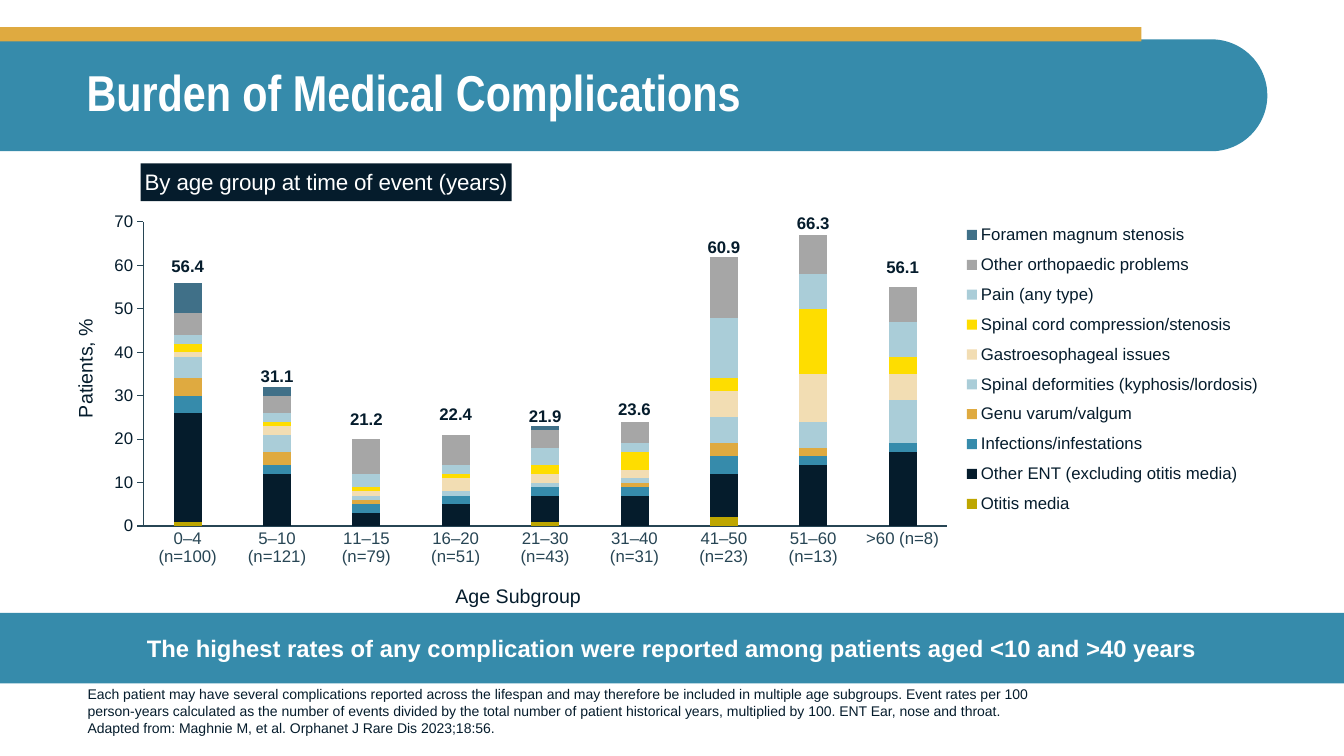
from dataclasses import dataclass

from lxml import etree
from pptx import Presentation
from pptx import util as u
from pptx.chart.data import CategoryChartData
from pptx.dml.color import RGBColor
from pptx.enum import chart as ch, shapes, text
from pptx.oxml.ns import qn


@dataclass(frozen=True)
class Theme:
    """Colours, fonts and type sizes of the slide."""
    ink: str = "051C2C"
    axis: str = "274554"
    teal: str = "368BAB"
    gold: str = "DFAA40"
    pale: str = "AACDD8"
    white: str = "FFFFFF"
    font: str = "Arial"
    head_font: str = "Arial Narrow"
    head: int = 36
    message: int = 17
    subtitle: int = 16
    axis_title: int = 14
    label: int = 12
    note: int = 10


T = Theme()
LEFT, CENTER = text.PP_ALIGN.LEFT, text.PP_ALIGN.CENTER
TOP, MIDDLE, BOTTOM = (text.MSO_ANCHOR.TOP, text.MSO_ANCHOR.MIDDLE,
                       text.MSO_ANCHOR.BOTTOM)

CATEGORIES = ["0–4 (n=100)", "5–10 (n=121)", "11–15 (n=79)", "16–20 (n=51)",
              "21–30 (n=43)", "31–40 (n=31)", "41–50 (n=23)", "51–60 (n=13)",
              ">60 (n=8)"]
TOTALS = [56.4, 31.1, 21.2, 22.4, 21.9, 23.6, 60.9, 66.3, 56.1]
SERIES = [
    ("Otitis media", "BEA600", [1, None, None, None, 1, None, 2, None, None]),
    ("Other ENT (excluding otitis media)", T.ink, [25, 12, 3, 5, 6, 7, 10, 14, 17]),
    ("Infections/infestations", T.teal, [4, 2, 2, 2, 2, 2, 4, 2, 2]),
    ("Genu varum/valgum", T.gold, [4, 3, 1, 0, None, 1, 3, 2, None]),
    ("Spinal deformities (kyphosis/lordosis)", T.pale, [5, 4, 1, 1, 1, 1, 6, 6, 10]),
    ("Gastroesophageal issues", "F2DDB3", [1, 2, 1, 3, 2, 2, 6, 11, 6]),
    ("Spinal cord compression/stenosis", "FEDD00", [2, 1, 1, 1, 2, 4, 3, 15, 4]),
    ("Pain (any type)", T.pale, [2, 2, 3, 2, 4, 2, 14, 8, 8]),
    ("Other orthopaedic problems", "A6A6A6", [5, 4, 8, 7, 4, 5, 14, 9, 8]),
    ("Foramen magnum stenosis", "407088",
     [7, 2, None, None, 1, None, None, None, None]),
]
AXIS_MAX = 70
CHART_BOX = (0.77, 1.55, 11.8, 4.41)
PLOT = (0.055, 0.148, 0.676, 0.684)


class SlideBuilder:
    """Adds themed elements to the current slide."""

    def __init__(self, slide, theme):
        self.slide, self.theme = slide, theme

    def style(self, font, size, color, bold=False, name=None):
        """Set size, colour, weight and typeface of a font."""
        font.size, font.bold = u.Pt(size), bold
        font.name = name or self.theme.font
        font.color.rgb = RGBColor.from_string(color)

    def set_text(self, sp, lines, size, color, bold=False, name=None,
                 align=LEFT, anchor=TOP, wrap=True):
        """Fill a shape with one paragraph per line."""
        tf = sp.text_frame
        tf.word_wrap, tf.vertical_anchor = wrap, anchor
        tf.text = "\n".join(lines)
        for p in tf.paragraphs:
            p.alignment = align
            self.style(p.font, size, color, bold, name)
        return tf

    def label(self, box, lines, size, color, rotation=0, **kw):
        """Add a text box."""
        sp = self.slide.shapes.add_textbox(*map(u.Inches, box))
        sp.rotation = rotation
        return self.set_text(sp, lines, size, color, **kw)

    def block(self, box, color, kind=shapes.MSO_SHAPE.RECTANGLE):
        """Add a filled shape without outline."""
        sp = self.slide.shapes.add_shape(kind, *map(u.Inches, box))
        sp.shadow.inherit = False
        sp.fill.solid()
        sp.fill.fore_color.rgb = RGBColor.from_string(color)
        sp.line.fill.background()
        return sp

    def place(self, parent, box, inner=False):
        """Give a chart part a manual layout in fractions of the chart."""
        for old in parent.findall(qn("c:layout")):
            parent.remove(old)
        layout = etree.Element(qn("c:layout"))
        manual = etree.SubElement(layout, qn("c:manualLayout"))
        pairs = [("layoutTarget", "inner")] if inner else []
        pairs += [("xMode", "edge"), ("yMode", "edge"), *zip("xywh", box)]
        for tag, val in pairs:
            etree.SubElement(manual, qn("c:" + tag)).set("val", str(val))
        overlay = parent.find(qn("c:overlay"))
        if overlay is None:
            parent.insert(0, layout)
        else:
            overlay.addprevious(layout)

    def axis(self, axis, color, tick):
        """Style a chart axis."""
        axis.has_major_gridlines = False
        axis.major_tick_mark, axis.minor_tick_mark = tick, ch.XL_TICK_MARK.NONE
        axis.format.line.color.rgb = RGBColor.from_string(self.theme.axis)
        axis.format.line.width = u.Pt(0.75)
        self.style(axis.tick_labels.font, self.theme.label, color)

    def stacked_chart(self, box, title):
        """Add the stacked column chart with title and legend."""
        t = self.theme
        data = CategoryChartData()
        data.categories = CATEGORIES
        for name, _, values in SERIES:
            data.add_series(name, values)
        chart = self.slide.shapes.add_chart(
            ch.XL_CHART_TYPE.COLUMN_STACKED, *map(u.Inches, box), data).chart
        self.style(chart.font, t.note, t.ink)

        plot = chart.plots[0]
        plot.gap_width, plot.overlap, plot.vary_by_categories = 219, 100, False
        for ser, (_, color, _) in zip(plot.series, SERIES):
            ser.format.fill.solid()
            ser.format.fill.fore_color.rgb = RGBColor.from_string(color)

        self.axis(chart.category_axis, t.axis, ch.XL_TICK_MARK.NONE)
        self.axis(chart.value_axis, t.ink, ch.XL_TICK_MARK.OUTSIDE)
        chart.value_axis.minimum_scale = 0
        chart.value_axis.maximum_scale = AXIS_MAX
        chart.value_axis.major_unit = 10

        chart.has_title = True
        heading = chart.chart_title
        heading.text_frame.text = title
        self.style(heading.text_frame.paragraphs[0].font, t.subtitle, t.white)
        heading.format.fill.solid()
        heading.format.fill.fore_color.rgb = RGBColor.from_string(t.ink)

        chart.has_legend = True
        chart.legend.position = ch.XL_LEGEND_POSITION.RIGHT
        chart.legend.include_in_layout = False
        self.style(chart.legend.font, t.label, t.ink)

        parts = [("title", (0.053, 0.016)), ("legend", (0.74, 0.13, 0.26, 0.7)),
                 ("plotArea", PLOT)]
        for tag, spot in parts:
            part = chart.element.xpath("c:chart/c:" + tag)[0]
            self.place(part, spot, tag == "plotArea")

    def totals(self, box, size=(0.53, 0.3)):
        """Put each total just above its column."""
        x, y, w, h = box
        px, py, pw, ph = PLOT
        step = w * pw / len(TOTALS)
        base = y + h * (py + ph)
        for i, total in enumerate(TOTALS):
            left = x + w * px + step * (i + 0.5) - size[0] / 2
            top = base - h * ph * total / AXIS_MAX - size[1]
            self.label((left, top, *size), [str(total)], self.theme.label,
                       self.theme.ink, bold=True, align=CENTER, wrap=False)


def main():
    """Build and save the slide."""
    prs = Presentation()
    prs.slide_width, prs.slide_height = u.Inches(13.33), u.Inches(7.5)
    s = SlideBuilder(prs.slides.add_slide(prs.slide_layouts[6]), T)

    banner = s.block((5.73, -5.34, 1.11, 12.57), T.teal,
                     shapes.MSO_SHAPE.ROUND_2_SAME_RECTANGLE)
    banner.rotation = 270
    banner.adjustments[0], banner.adjustments[1] = 0, 0.5
    s.block((0, 0.27, 11.32, 0.14), T.gold)
    tf = s.label((0.76, 0.39, 11.81, 1.1), ["Burden of Medical Complications"],
                 T.head, T.white, bold=True, name=T.head_font, anchor=MIDDLE)
    tf.paragraphs[0].line_spacing = 0.9

    s.label((0.77, 6.79, 9.88, 0.56), [
        "Each patient may have several complications reported across the lifespan "
        "and may therefore be included in multiple age subgroups. Event rates per "
        "100 person-years calculated as the number of events divided by the total "
        "number of patient historical years, multiplied by 100. ENT Ear, nose and "
        "throat.",
        "Adapted from: Maghnie M, et al. Orphanet J Rare Dis 2023;18:56."],
        T.note, T.ink, anchor=BOTTOM)
    message = s.block((0, 6.08, 13.33, 0.7), T.teal)
    s.set_text(message, ["The highest rates of any complication were reported among "
                         "patients aged <10 and >40 years"],
               T.message, T.white, bold=True, align=CENTER, anchor=MIDDLE)

    s.stacked_chart(CHART_BOX, "By age group at time of event (years)")
    s.label((0.2, 3.43, 1.29, 0.34), ["Patients, %"], T.axis_title, T.ink,
            rotation=270)
    s.totals(CHART_BOX)
    s.label((4.21, 5.74, 1.86, 0.34), ["Age Subgroup"], T.axis_title, T.ink,
            align=CENTER)
    prs.save("out.pptx")


if __name__ == "__main__":
    main()
